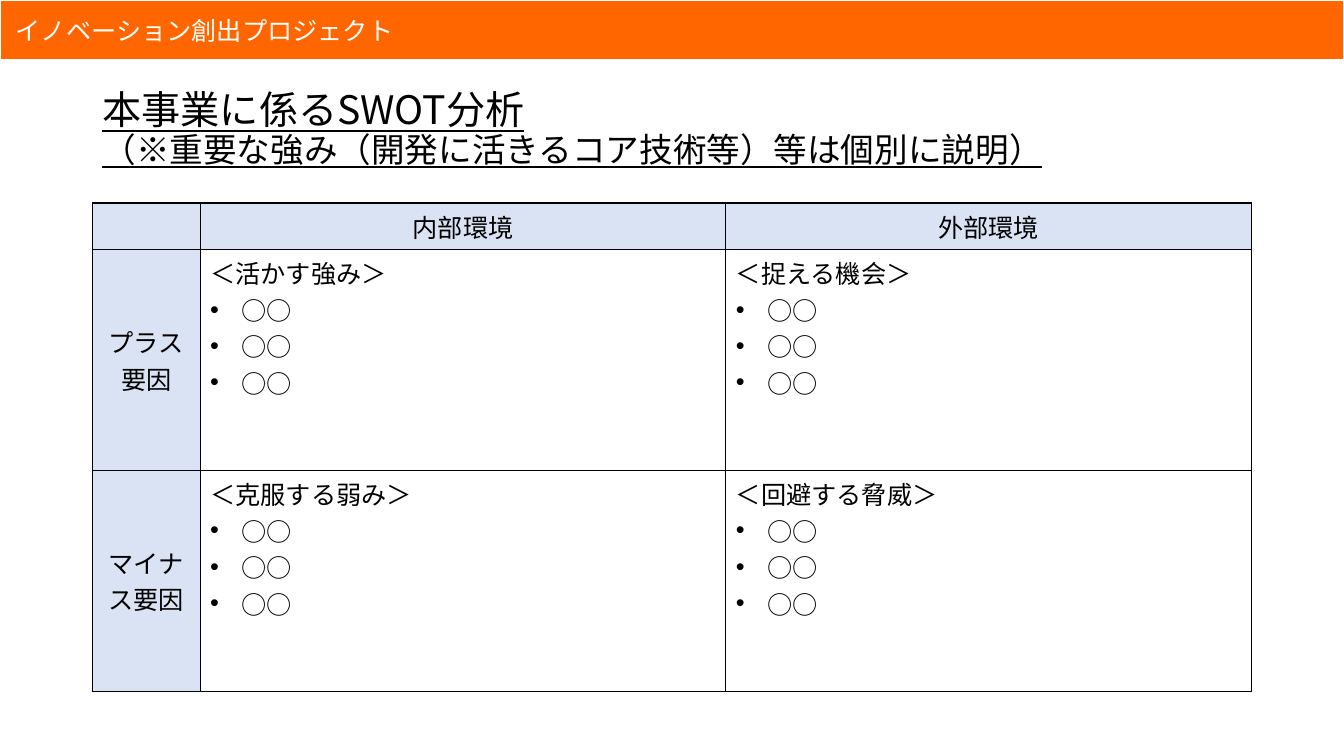
import pptx
import pptx.util
import pptx.dml.color
import pptx.enum.shapes
import pptx.enum.text
import pptx.oxml
import pptx.oxml.ns

Pt = pptx.util.Pt
ALIGN = pptx.enum.text.PP_ALIGN
ANCHOR = pptx.enum.text.MSO_ANCHOR

# Content
PROJECT = "イノベーション創出プロジェクト"
HEADING = "本事業に係るSWOT分析"
HEADING_NOTE = "（※重要な強み（開発に活きるコア技術等）等は個別に説明）"
ENVIRONMENTS = ["内部環境", "外部環境"]
FACTORS = [
    ("プラス要因", ["＜活かす強み＞", "＜捉える機会＞"]),
    ("マイナス要因", ["＜克服する弱み＞", "＜回避する脅威＞"]),
]
POINTS = ["○○"] * 3

THEME = {
    "font": "Noto Sans CJK JP",
    "banner": "FF6600", "white": "FFFFFF", "black": "000000", "label": "DAE3F3",
    "heading": 28, "note": 24, "body": 18, "border": 1,
}

# Geometry in points
SLIDE_W, SLIDE_H = 960, 540
BANNER_H = 43
MARGIN = 66
CONTENT_W = SLIDE_W - 2 * MARGIN
TITLE_TOP, TITLE_H = 53.5, 79
TABLE_TOP = 145
LABEL_W = 77
COLUMN_W = (CONTENT_W - LABEL_W) / len(ENVIRONMENTS)
HEADER_H, FACTOR_H = 33, 157.7
BULLET_INDENT = 22.5


def colour(name):
    return pptx.dml.color.RGBColor.from_string(THEME[name])


def add_text(paragraph, text, size="body", ink="black", underline=None):
    run = paragraph.add_run()
    run.text = text
    run.font.size = Pt(THEME[size])
    run.font.color.rgb = colour(ink)
    run.font.underline = underline
    run.font.name = THEME["font"]
    east_asian = pptx.oxml.ns.qn("a:ea")
    run.font._element.makeelement(east_asian)
    run.font._element.find(pptx.oxml.ns.qn("a:latin")).addnext(
        run.font._element.makeelement(east_asian, {"typeface": THEME["font"]}))


def add_bullet(paragraph):
    properties = paragraph._p.get_or_add_pPr()
    properties.set("marL", str(Pt(BULLET_INDENT)))
    properties.set("indent", str(-Pt(BULLET_INDENT)))
    for tag, attribute, value in [("buFont", "typeface", "Arial"), ("buChar", "char", "•")]:
        properties.append(properties.makeelement(
            pptx.oxml.ns.qn(f"a:{tag}"), {attribute: value}))


def format_cell(cell, is_label):
    if is_label:
        cell.fill.solid()
        cell.fill.fore_color.rgb = colour("label")
    else:
        cell.fill.background()
    properties = cell._tc.get_or_add_tcPr()
    for position, side in enumerate(["lnL", "lnR", "lnT", "lnB"]):
        properties.insert(position, pptx.oxml.parse_xml(
            f'<a:{side} {pptx.oxml.ns.nsdecls("a")} w="{Pt(THEME["border"])}">'
            f'<a:solidFill><a:srgbClr val="{THEME["black"]}"/></a:solidFill></a:{side}>'))


def add_label(cell, text, anchor):
    cell.vertical_anchor = anchor
    paragraph = cell.text_frame.paragraphs[0]
    paragraph.alignment = ALIGN.CENTER
    add_text(paragraph, text)


deck = pptx.Presentation()
deck.slide_width, deck.slide_height = Pt(SLIDE_W), Pt(SLIDE_H)
slide = deck.slides.add_slide(deck.slide_layouts[5])

# Project banner
banner = slide.shapes.add_shape(
    pptx.enum.shapes.MSO_SHAPE.RECTANGLE, 0, 0, Pt(SLIDE_W), Pt(BANNER_H))
banner.shadow.inherit = False
banner.fill.solid()
banner.fill.fore_color.rgb = colour("banner")
banner.line.color.rgb = colour("white")
banner.line.width = Pt(1.5)
banner.text_frame.margin_left = Pt(11.25)
banner.text_frame.vertical_anchor = ANCHOR.MIDDLE
project = banner.text_frame.paragraphs[0]
project.alignment = ALIGN.LEFT
add_text(project, PROJECT, ink="white")

# Title
title = slide.shapes.title
title.left, title.top = Pt(MARGIN), Pt(TITLE_TOP)
title.width, title.height = Pt(CONTENT_W), Pt(TITLE_H)
title.text_frame.word_wrap = True
title.text_frame.auto_size = pptx.enum.text.MSO_AUTO_SIZE.NONE
title.text_frame.vertical_anchor = ANCHOR.MIDDLE
heading = title.text_frame.paragraphs[0]
heading.alignment = ALIGN.LEFT
heading.line_spacing = 0.9
add_text(heading, HEADING, "heading", underline=True)
heading.add_line_break()
add_text(heading, HEADING_NOTE, "note", underline=True)

# SWOT table
swot = slide.shapes.add_table(
    len(FACTORS) + 1, len(ENVIRONMENTS) + 1, Pt(MARGIN), Pt(TABLE_TOP),
    Pt(CONTENT_W), Pt(HEADER_H + FACTOR_H * len(FACTORS))).table
swot.first_row = swot.horz_banding = False
for column, width in zip(swot.columns, [LABEL_W] + [COLUMN_W] * len(ENVIRONMENTS)):
    column.width = Pt(width)
for row, height in zip(swot.rows, [HEADER_H] + [FACTOR_H] * len(FACTORS)):
    row.height = Pt(height)
for r, row in enumerate(swot.rows):
    for c, cell in enumerate(row.cells):
        format_cell(cell, is_label=r == 0 or c == 0)

for c, environment in enumerate(ENVIRONMENTS, 1):
    add_label(swot.cell(0, c), environment, ANCHOR.TOP)
for r, (factor, quadrants) in enumerate(FACTORS, 1):
    add_label(swot.cell(r, 0), factor, ANCHOR.MIDDLE)
    for c, quadrant in enumerate(quadrants, 1):
        frame = swot.cell(r, c).text_frame
        add_text(frame.paragraphs[0], quadrant)
        for point in POINTS:
            paragraph = frame.add_paragraph()
            add_bullet(paragraph)
            add_text(paragraph, point)

deck.save("out.pptx")
